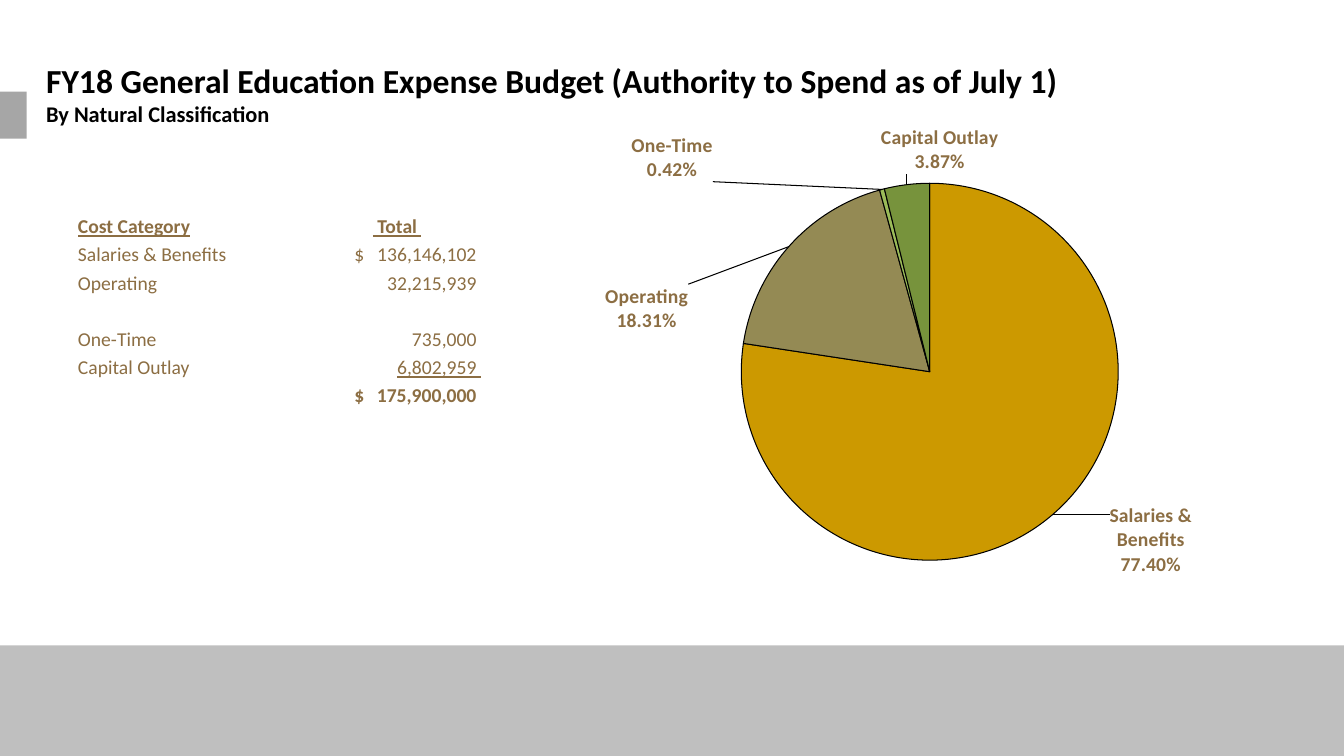
from lxml import etree
from pptx import Presentation
from pptx.chart.data import CategoryChartData as Data
from pptx.dml.color import RGBColor as Color
from pptx.enum.chart import XL_CHART_TYPE as Kind, XL_LABEL_POSITION as Spot
from pptx.enum.shapes import MSO_SHAPE as Shape
from pptx.enum.text import MSO_ANCHOR as Anchor, PP_ALIGN as Align
from pptx.oxml import parse_xml
from pptx.oxml.ns import nsdecls, qn
from pptx.util import Pt

FACE = "Calibri"
BROWN = "8C6E43"
ROWS = [
    ("Salaries & Benefits", "$", "136,146,102 "),
    ("Operating", "", "32,215,939 "),
    ("One-Time", "", "735,000 "),
    ("Capital Outlay", "", "6,802,959 "),
    ("", "$", "175,900,000 "),
]
SHARES = [
    (77.4, "CC9900", 0.069, -0.03),
    (18.31, "948A54", -0.125, 0.177),
    (0.42, "9BBB59", -0.218, -0.004),
    (3.87, "77933C", 0.12, -0.01),
]


def tint(code):
    return Color.from_string(code)


def style(font, size, code, bold=False, line=None):
    font.name = FACE
    font.size = Pt(size)
    font.color.rgb = tint(code)
    font.bold = bold
    font.underline = line


def block(slide, box, code):
    shape = slide.shapes.add_shape(Shape.RECTANGLE, *map(Pt, box))
    shape.shadow.inherit = False
    shape.fill.solid()
    shape.fill.fore_color.rgb = tint(code)
    shape.line.fill.background()


def title(slide, box):
    frame = slide.shapes.add_textbox(*map(Pt, box)).text_frame
    frame.word_wrap = True
    frame.margin_left = frame.margin_right = 0
    frame.margin_top = frame.margin_bottom = 0
    head = frame.paragraphs[0]
    head.text = "FY18 General Education Expense Budget (Authority to Spend as of July 1)"
    style(head.font, 24, "000000", True)
    sub = frame.add_paragraph()
    sub.text = "By Natural Classification"
    style(sub.font, 16, "000000", True)


def fill(cell, text, bold=False, line=None):
    para = cell.text_frame.paragraphs[0]
    para.text = text
    style(para.font, 14, BROWN, bold, line)
    if not text:
        end = etree.SubElement(para._p, qn("a:endParaRPr"))
        end.set("sz", "1400")
    return para


def amount(cell, sign, value, bold, line):
    props = cell.text_frame.paragraphs[0]._p.get_or_add_pPr()
    stops = etree.SubElement(props, qn("a:tabLst"))
    for place, side in ((29.5, "l"), (120, "r")):
        stop = etree.SubElement(stops, qn("a:tab"))
        stop.set("pos", str(Pt(place)))
        stop.set("algn", side)
    para = fill(cell, "\t" + sign, bold)
    run = para.add_run()
    run.text = "\t" + value
    run.font.underline = line


def costs(slide, box):
    count = len(ROWS) + 1
    table = slide.shapes.add_table(count, 2, *map(Pt, box)).table
    table.first_row = table.horz_banding = False
    table.columns[0].width = Pt(168)
    table.columns[1].width = Pt(box[2] - 168)
    for i, row in enumerate(table.rows):
        row.height = Pt(box[3] * (2 if i == 3 else 1) / (count + 1))
    for cell in table.iter_cells():
        cell.fill.background()
        cell.vertical_anchor = Anchor.BOTTOM
        cell.margin_left = cell.margin_right = cell.margin_top = Pt(0.7)
        cell.margin_bottom = 0
    fill(table.cell(0, 0), "Cost Category", True, True)
    fill(table.cell(0, 1), " Total ", True, True).alignment = Align.CENTER
    for i, (name, sign, value) in enumerate(ROWS, 1):
        fill(table.cell(i, 0), name)
        amount(table.cell(i, 1), sign, value, not name, i == count - 2)


def layout(inner):
    return parse_xml(f'<c:layout {nsdecls("c")}><c:manualLayout>{inner}</c:manualLayout></c:layout>')


def pie(slide, box):
    data = Data()
    data.categories = [row[0] for row in ROWS[:-1]]
    data.add_series("Series 1", [share[0] for share in SHARES])
    chart = slide.shapes.add_chart(Kind.PIE, *map(Pt, box), data).chart
    chart.has_legend = chart.has_title = False
    style(chart.font, 10, "000000")
    plot = chart.plots[0]
    plot.vary_by_categories = True
    area = chart._chartSpace.chart.plotArea
    for old in area.findall(qn("c:layout")):
        area.remove(old)
    area.insert(0, layout(
        '<c:layoutTarget val="inner"/><c:xMode val="edge"/><c:yMode val="edge"/>'
        '<c:x val="0.263"/><c:y val="0.132"/><c:w val="0.49"/><c:h val="0.742"/>'))
    series = plot.series[0]
    labels = series.data_labels
    labels.show_percentage = labels.show_category_name = True
    labels.show_value = False
    labels.number_format = "0.00%"
    labels.number_format_is_linked = False
    labels.position = Spot.OUTSIDE_END
    style(labels.font, 14, BROWN, True)
    core = labels._element
    for tag in ("c:separator", "c:showLeaderLines", "c:leaderLines"):
        for old in core.findall(qn(tag)):
            core.remove(old)
    etree.SubElement(core, qn("c:separator")).text = "\n"
    etree.SubElement(core, qn("c:showLeaderLines")).set("val", "1")
    core.append(parse_xml(
        f'<c:leaderLines {nsdecls("c", "a")}><c:spPr><a:ln w="9525"><a:solidFill>'
        '<a:srgbClr val="000000"/></a:solidFill></a:ln></c:spPr></c:leaderLines>'))
    for i, (_, code, x, y) in enumerate(SHARES):
        point = series.points[i]
        point.format.fill.solid()
        point.format.fill.fore_color.rgb = tint(code)
        point.format.line.color.rgb = tint("000000")
        point.format.line.width = Pt(0.75)
        label = parse_xml(
            f'<c:dLbl {nsdecls("c")}><c:idx val="{i}"/>'
            '<c:dLblPos val="outEnd"/><c:showLegendKey val="0"/><c:showVal val="0"/>'
            '<c:showCatName val="1"/><c:showSerName val="0"/><c:showPercent val="1"/>'
            '<c:showBubbleSize val="0"/><c:separator>\n</c:separator></c:dLbl>')
        label.insert(1, layout(f'<c:x val="{x}"/><c:y val="{y}"/>'))
        core.insert(i, label)
        style(series.points[i].data_label.font, 14, BROWN, True)
        label.insert(2, parse_xml(
            f'<c:numFmt {nsdecls("c")} formatCode="0.00%" sourceLinked="0"/>'))


def main():
    deck = Presentation()
    deck.slide_width, deck.slide_height = Pt(960), Pt(540)
    slide = deck.slides.add_slide(deck.slide_layouts[6])
    block(slide, (0, 461, 960, 79), "BFBFBF")
    block(slide, (-3.5, 65.5, 22.5, 33.5), "A6A6A6")
    title(slide, (33, 42.5, 864, 50))
    costs(slide, (55, 150.5, 289.5, 141))
    pie(slide, (385, 83, 549.5, 363))
    deck.save("out.pptx")


if __name__ == "__main__":
    main()
